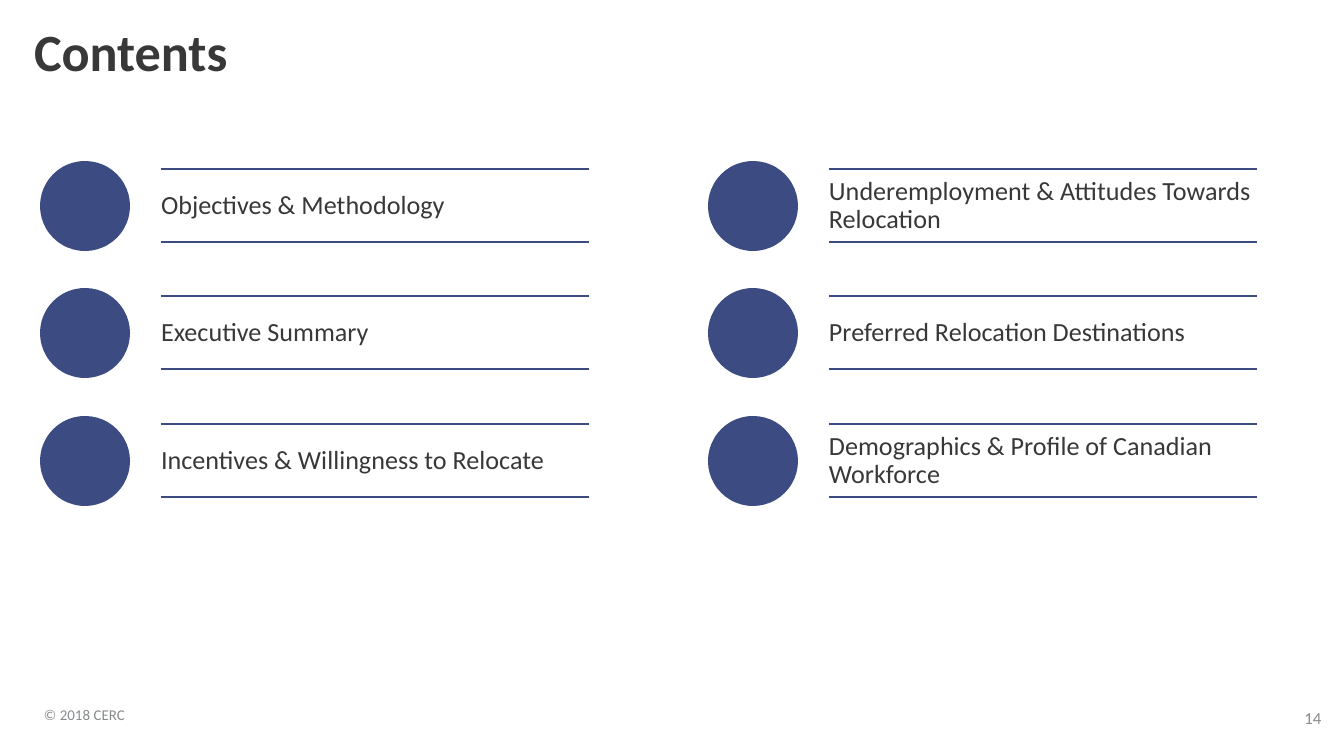
from lxml import etree
from pptx import Presentation
from pptx.dml.color import RGBColor
from pptx.enum.shapes import MSO_CONNECTOR, MSO_SHAPE
from pptx.enum.text import MSO_ANCHOR, PP_ALIGN
from pptx.oxml.ns import qn
from pptx.util import Emu, Pt

STRAIGHT = MSO_CONNECTOR.STRAIGHT
OVAL = MSO_SHAPE.OVAL
TOP, MIDDLE, BOTTOM = MSO_ANCHOR.TOP, MSO_ANCHOR.MIDDLE, MSO_ANCHOR.BOTTOM
LEFT, CENTER = PP_ALIGN.LEFT, PP_ALIGN.CENTER

EMU_PER_PX = 914400 / 134.4
NAVY, DARK, GRAY = "3C4B82", "383839", "888B8D"


def px(length):
    return Emu(round(length * EMU_PER_PX))


def color(hex_string):
    return RGBColor.from_string(hex_string)


class SlideBuilder:
    font_name = "Calibri"

    def __init__(self, slide):
        self.slide = slide

    def text(self, text, left, top, width, height, size, hex_color=DARK,
             bold=False, anchor=MIDDLE, align=LEFT, spacing=0.9, wrap=True):
        shape = self.slide.shapes.add_textbox(
            px(left), px(top), px(width), px(height))
        frame = shape.text_frame
        frame_format = {"margin_left": 0, "margin_top": 0, "margin_right": 0,
                        "margin_bottom": 0, "word_wrap": wrap,
                        "vertical_anchor": anchor}
        for name, value in frame_format.items():
            setattr(frame, name, value)
        paragraph = frame.paragraphs[0]
        paragraph.text = text
        paragraph.alignment = align
        paragraph.line_spacing = spacing
        font = paragraph.runs[0].font
        font_format = {"name": self.font_name, "size": Pt(size), "bold": bold}
        for name, value in font_format.items():
            setattr(font, name, value)
        font.color.rgb = color(hex_color)

    def circle(self, left, top, diameter, hex_color=NAVY):
        shape = self.slide.shapes.add_shape(
            OVAL, px(left), px(top), px(diameter), px(diameter))
        shape.shadow.inherit = False
        shape.fill.solid()
        shape.fill.fore_color.rgb = color(hex_color)
        shape.line.fill.background()

    def rule(self, left, top, width, hex_color=NAVY, weight=0.75):
        connector = self.slide.shapes.add_connector(
            STRAIGHT, px(left), px(top), px(left + width), px(top))
        connector.line.color.rgb = color(hex_color)
        connector.line.width = Pt(weight)
        etree.SubElement(connector._element.spPr, qn("a:effectLst"))


presentation = Presentation()
presentation.slide_width = px(1344)
presentation.slide_height = px(756)
builder = SlideBuilder(
    presentation.slides.add_slide(presentation.slide_layouts[6]))

# Footer and page number
footer = {"hex_color": GRAY, "anchor": BOTTOM, "spacing": 0.85, "wrap": False}
builder.text("© 2018 CERC", 44, 700, 102, 24, 8, **footer)
builder.text("14", 1294, 711, 38, 17, 9, align=CENTER, **footer)

# Title
builder.text("Contents", 34, 26, 1176, 56, 28, bold=True, anchor=TOP)

# Contents: two columns of entries, each with its number of text lines
COLUMNS = [
    [("Objectives & Methodology", 1),
     ("Executive Summary", 1),
     ("Incentives & Willingness to Relocate", 1)],
    [("Underemployment & Attitudes Towards Relocation", 2),
     ("Preferred Relocation Destinations", 1),
     ("Demographics & Profile of Canadian Workforce", 2)],
]
COLUMN_LEFT, COLUMN_PITCH = 40, 668
ROW_TOPS = (161, 288, 416)
DIAMETER, LINE_HEIGHT = 90, 28
ENTRY_OFFSET, ENTRY_WIDTH = 121, 428
RULE_OFFSETS = (8, 81)

for column, entries in enumerate(COLUMNS):
    left = COLUMN_LEFT + column * COLUMN_PITCH
    entry_left = left + ENTRY_OFFSET
    for top, (label, line_count) in zip(ROW_TOPS, entries):
        height = line_count * LINE_HEIGHT
        label_top = top + (DIAMETER - height) // 2
        builder.circle(left, top, DIAMETER)
        builder.text(label, entry_left, label_top, ENTRY_WIDTH, height, 14)
        for offset in RULE_OFFSETS:
            builder.rule(entry_left, top + offset, ENTRY_WIDTH)

presentation.save("out.pptx")
